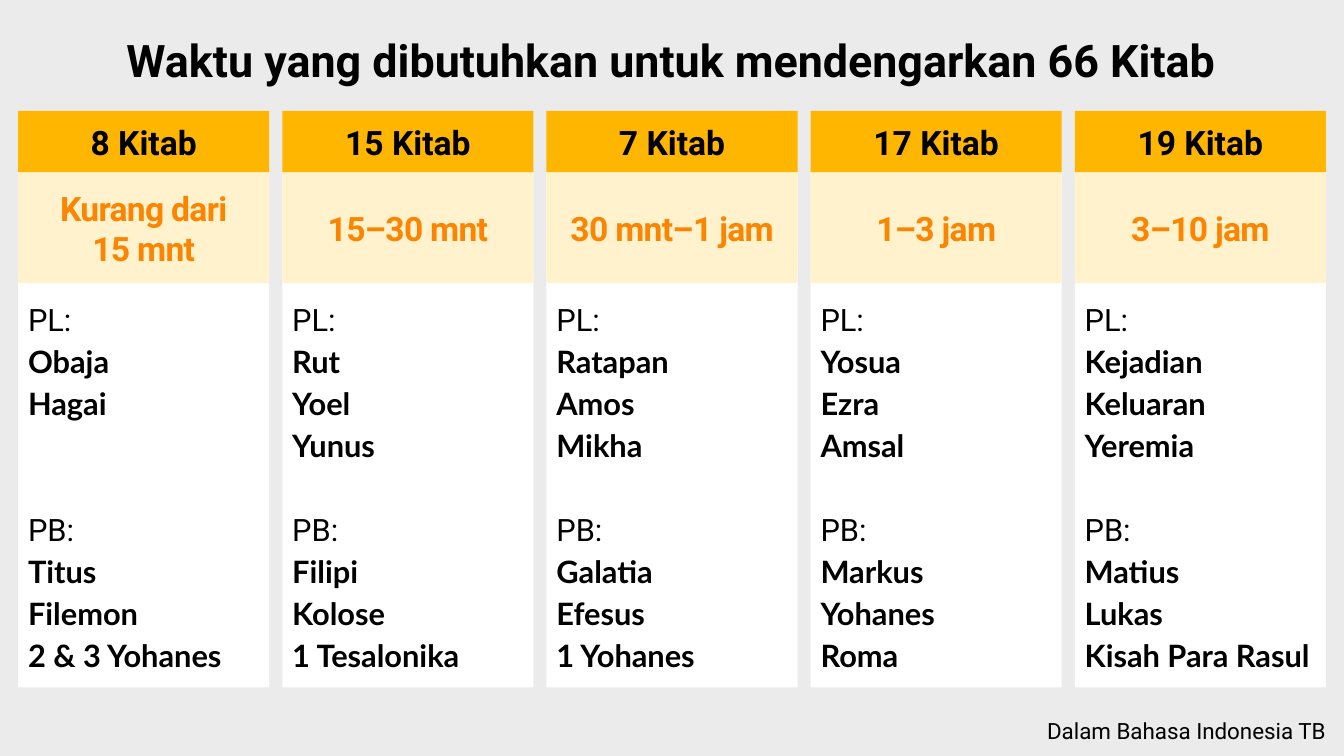
import pptx
import pptx.util
import pptx.dml.color
import pptx.enum.shapes
import pptx.enum.text

Inches, Pt = pptx.util.Inches, pptx.util.Pt
ALIGN, ANCHOR = pptx.enum.text.PP_ALIGN, pptx.enum.text.MSO_ANCHOR

COLORS = {"page": "EBEBEB", "card": "FFFFFF", "count": "FFB600",
          "duration": "FFF2CC", "accent": "FB8500", "text": "000000"}
WIDTH, HEIGHT = 13.33, 7.5
MARGIN, GAP, CARDS_TOP = 0.18, 0.13, 1.1
COUNT_H, DURATION_H, BODY_H = 0.61, 1.1, 5.11
LIST_OFFSET, LINE = 1.22, 30

GROUPS = [
    ("8 Kitab", ["Kurang dari", "15 mnt"],
     ["Obaja", "Hagai"], ["Titus", "Filemon", "2 & 3 Yohanes"]),
    ("15 Kitab", ["15–30 mnt"],
     ["Rut", "Yoel", "Yunus"], ["Filipi", "Kolose", "1 Tesalonika"]),
    ("7 Kitab", ["30 mnt–1 jam"],
     ["Ratapan", "Amos", "Mikha"], ["Galatia", "Efesus", "1 Yohanes"]),
    ("17 Kitab", ["1–3 jam"],
     ["Yosua", "Ezra", "Amsal"], ["Markus", "Yohanes", "Roma"]),
    ("19 Kitab", ["3–10 jam"],
     ["Kejadian", "Keluaran", "Yeremia"], ["Matius", "Lukas", "Kisah Para Rasul"]),
]
LIST_ROWS = max(len(old) for _, _, old, _ in GROUPS)


def rgb(name):
    return pptx.dml.color.RGBColor.from_string(COLORS[name])


def write(tf, text, size, font="Roboto", color="text", bold=False,
          align=ALIGN.LEFT, line=None, before=0, spacing=None):
    """Add one paragraph, using the empty first one when there is one."""
    p = tf.paragraphs[0]
    if p.runs:
        p = tf.add_paragraph()
    p.alignment = align
    p.space_before = Pt(before)
    if line:
        p.line_spacing = Pt(line)
    r = p.add_run()
    r.text = text
    r.font.name, r.font.size, r.font.bold = font, Pt(size), bold
    r.font.color.rgb = rgb(color)
    if spacing is not None:
        r.font._element.set("spc", str(int(spacing * 100)))


def frame(sp, left=0, anchor=ANCHOR.TOP):
    tf = sp.text_frame
    tf.word_wrap = True
    tf.auto_size = pptx.enum.text.MSO_AUTO_SIZE.NONE
    tf.vertical_anchor = anchor
    tf.margin_left = Inches(left)
    tf.margin_right = tf.margin_top = tf.margin_bottom = 0
    return tf


def add_panel(s, x, y, w, h, color):
    sp = s.shapes.add_shape(pptx.enum.shapes.MSO_SHAPE.RECTANGLE,
                            Inches(x), Inches(y), Inches(w), Inches(h))
    sp.shadow.inherit = False
    sp.fill.solid()
    sp.fill.fore_color.rgb = rgb(color)
    sp.line.fill.background()
    return frame(sp, anchor=ANCHOR.MIDDLE)


def add_text_box(s, x, y, w, h, left=0):
    return frame(s.shapes.add_textbox(Inches(x), Inches(y), Inches(w), Inches(h)), left)


def add_title(s, x, y, w, h):
    title = s.shapes.title
    title.left, title.top, title.width, title.height = map(Inches, (x, y, w, h))
    write(frame(title), "Waktu yang dibutuhkan untuk mendengarkan 66 Kitab", 32,
          bold=True, align=ALIGN.CENTER)


def add_group(s, x, y, w, count, duration, old_books, new_books):
    body_y = y + COUNT_H
    add_panel(s, x, body_y, w, BODY_H, "card")
    write(add_panel(s, x, y, w, COUNT_H, "count"), count, 24,
          bold=True, align=ALIGN.CENTER)
    tf = add_panel(s, x, body_y, w, DURATION_H, "duration")
    for text in duration:
        write(tf, text, 24, color="accent", bold=True, align=ALIGN.CENTER, spacing=-0.5)

    tf = add_text_box(s, x, body_y + LIST_OFFSET, w, 9 * LINE / 72, left=0.1)
    gap = LINE * (1 + LIST_ROWS - len(old_books))
    for label, books, before in (("PL:", old_books, 0), ("PB:", new_books, gap)):
        write(tf, label, 22, line=LINE, before=before)
        for book in books:
            write(tf, book, 22, font="Lato", bold=True, line=LINE)


def add_note(s, x, y, w, h):
    write(add_text_box(s, x, y, w, h), "Dalam Bahasa Indonesia TB", 16,
          align=ALIGN.RIGHT, line=36)


def main():
    prs = pptx.Presentation()
    prs.slide_width, prs.slide_height = Inches(WIDTH), Inches(HEIGHT)
    s = prs.slides.add_slide(prs.slide_layouts[5])
    s.background.fill.solid()
    s.background.fill.fore_color.rgb = rgb("page")

    add_title(s, 0.25, 0.32, 12.82, 0.54)
    n = len(GROUPS)
    w = (WIDTH - 2 * MARGIN - (n - 1) * GAP) / n
    for i, group in enumerate(GROUPS):
        add_group(s, MARGIN + i * (w + GAP), CARDS_TOP, w, *group)
    add_note(s, 10.16, 6.88, 2.99, 0.43)
    prs.save("out.pptx")


if __name__ == "__main__":
    main()
